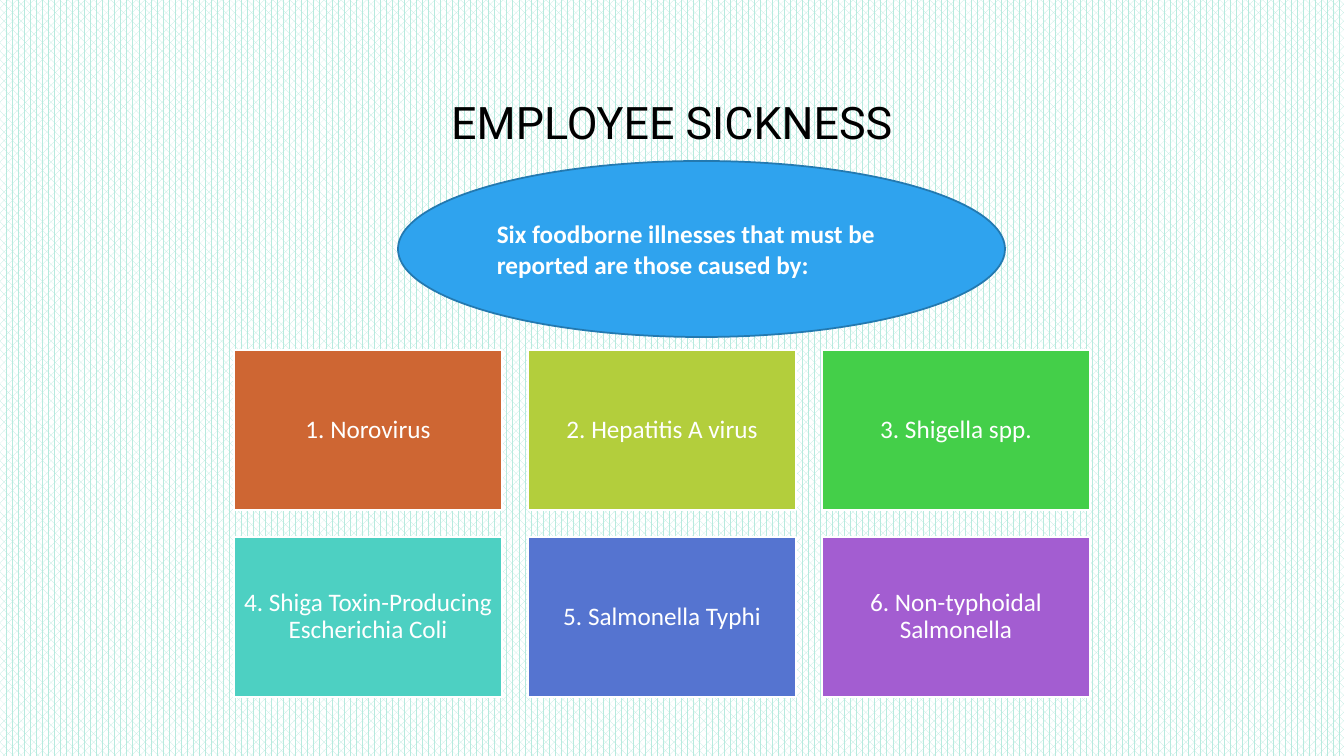
import pptx
import pptx.util
import pptx.dml.color
import pptx.enum.dml
import pptx.enum.shapes
import pptx.enum.text

PX = 914400 / 100.8
COLORS = {
    "backdrop": "FFFFFF",
    "pattern": "B7EADE",
    "title": "000000",
    "white": "FFFFFF",
    "ellipse": "2FA3EE",
    "ellipse_line": "2379B0",
    "orange": "CE6633",
    "lime": "B3CE3C",
    "green": "44CF49",
    "teal": "4DD0C2",
    "blue": "5574D0",
    "purple": "A35DD1",
}
SHAPES = pptx.enum.shapes.MSO_SHAPE
ALIGN = pptx.enum.text.PP_ALIGN


def px(length):
    return round(length * PX)


def color(name):
    return pptx.dml.color.RGBColor.from_string(COLORS[name])


def add_text(box, text, font="Calibri", size=18, ink="white", bold=False,
             align=ALIGN.CENTER, spacing=0.9, inset=7):
    frame = box.text_frame
    frame.word_wrap = True
    frame.vertical_anchor = pptx.enum.text.MSO_ANCHOR.MIDDLE
    frame.margin_left = frame.margin_right = px(inset)
    frame.margin_top = frame.margin_bottom = px(min(inset, 7))
    para = frame.paragraphs[0]
    para.alignment = align
    para.line_spacing = spacing
    span = para.add_run()
    span.text = text
    span.font.name = font
    span.font.size = pptx.util.Pt(size)
    span.font.bold = bold
    span.font.color.rgb = color(ink)


def add_panel(kind, left, top, width, height, fill, line):
    panel = page.shapes.add_shape(kind, px(left), px(top), px(width), px(height))
    panel.shadow.inherit = False
    panel.fill.solid()
    panel.fill.fore_color.rgb = color(fill)
    panel.line.color.rgb = color(line)
    panel.line.width = pptx.util.Pt(1.25)
    return panel


deck = pptx.Presentation()
deck.slide_width = px(1344)
deck.slide_height = px(756)
page = deck.slides.add_slide(deck.slide_layouts[6])

backdrop = page.background.fill
backdrop.patterned()
backdrop.pattern = pptx.enum.dml.MSO_PATTERN.PERCENT_60
backdrop.fore_color.rgb = color("pattern")
backdrop.back_color.rgb = color("backdrop")

title = page.shapes.add_textbox(px(101), px(90), px(1142), px(70))
add_text(title, "EMPLOYEE SICKNESS", font="Roboto", size=32, ink="title")

illnesses = [
    ("1. Norovirus", "orange"),
    ("2. Hepatitis A virus", "lime"),
    ("3. Shigella spp.", "green"),
    ("4. Shiga Toxin-Producing Escherichia Coli", "teal"),
    ("5. Salmonella Typhi", "blue"),
    ("6. Non-typhoidal Salmonella", "purple"),
]
for index, (illness, fill) in enumerate(illnesses):
    row, column = divmod(index, 3)
    card = add_panel(SHAPES.RECTANGLE, 234 + 294 * column, 350 + 187 * row,
                     268, 160, fill, "white")
    add_text(card, illness)

ellipse = add_panel(SHAPES.OVAL, 398, 161, 607, 176, "ellipse", "ellipse_line")
add_text(ellipse, "Six foodborne illnesses that must be reported are those caused by:",
         bold=True, align=ALIGN.LEFT, spacing=1.0, inset=10)

deck.save("out.pptx")
